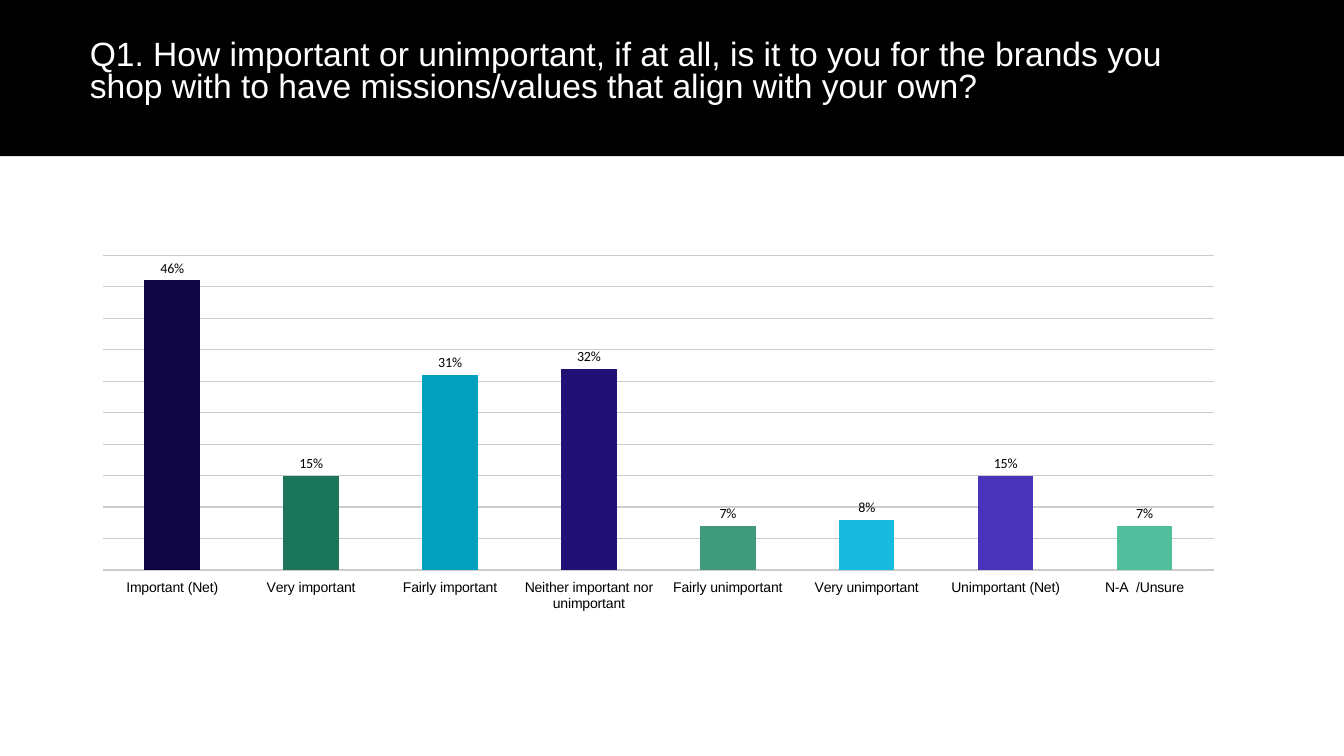
from lxml import etree
from pptx import Presentation
from pptx import util as u
from pptx.chart.data import CategoryChartData
from pptx.dml.color import RGBColor
from pptx.enum import chart as charts, shapes, text
from pptx.oxml.ns import qn

COLOURS = {"band": "000000", "title": "FFFFFF", "text": "000000", "grid": "CCCCCC"}
QUESTION = (
    "Q1. How important or unimportant, if at all, is it to you for the brands you "
    "shop with to have missions/values that align with your own?"
)
ANSWERS = [
    ("Important (Net)", 0.46, "0F0542"),
    ("Very important", 0.15, "1B755A"),
    ("Fairly important", 0.31, "00A0BE"),
    ("Neither important nor unimportant", 0.32, "211176"),
    ("Fairly unimportant", 0.07, "409A7C"),
    ("Very unimportant", 0.08, "18BBDD"),
    ("Unimportant (Net)", 0.15, "4933B9"),
    ("N-A  /Unsure", 0.07, "51BE9C"),
]
LEFT, WIDTH = u.Inches(0.79), u.Inches(11.48)


def set_font(font, name, size, colour):
    font.name = name
    font.size = u.Pt(size)
    font.bold = False
    font.color.rgb = RGBColor.from_string(colour)


def add_band(slide, height):
    band = slide.shapes.add_shape(
        shapes.MSO_SHAPE.RECTANGLE, 0, 0, u.Inches(13.33), height
    )
    band.shadow.inherit = False
    band.fill.solid()
    band.fill.fore_color.rgb = RGBColor.from_string(COLOURS["band"])
    band.line.fill.background()
    slide.shapes.title.element.addprevious(band.element)


def fill_title(title):
    title.left, title.top = LEFT, u.Inches(0.35)
    title.width, title.height = WIDTH, u.Inches(0.8)
    frame = title.text_frame
    frame.word_wrap = True
    frame.auto_size = text.MSO_AUTO_SIZE.NONE
    frame.vertical_anchor = text.MSO_ANCHOR.TOP
    paragraph = frame.paragraphs[0]
    paragraph.alignment = text.PP_ALIGN.LEFT
    paragraph.line_spacing = 0.8
    paragraph.space_before = u.Pt(0)
    run = paragraph.add_run()
    run.text = QUESTION
    set_font(run.font, "Arial", 24, COLOURS["title"])


def format_axes(chart):
    category_axis = chart.category_axis
    category_axis.major_tick_mark = charts.XL_TICK_MARK.NONE
    category_axis.tick_label_position = charts.XL_TICK_LABEL_POSITION.LOW
    category_axis.format.line.fill.background()
    set_font(category_axis.tick_labels.font, "Arial", 10, COLOURS["text"])

    value_axis = chart.value_axis
    value_axis.minimum_scale, value_axis.maximum_scale = 0, 0.5
    value_axis.major_unit = 0.05
    value_axis.has_major_gridlines = True
    grid_line = value_axis.major_gridlines.format.line
    grid_line.color.rgb = RGBColor.from_string(COLOURS["grid"])
    grid_line.width = u.Pt(0.75)
    value_axis.visible = False


def add_answer_chart(slide):
    data = CategoryChartData(number_format="0%")
    data.categories = [answer for answer, share, colour in ANSWERS]
    data.add_series("Series 1", [share for answer, share, colour in ANSWERS])
    chart = slide.shapes.add_chart(
        charts.XL_CHART_TYPE.COLUMN_CLUSTERED,
        LEFT, u.Inches(2.46), WIDTH, u.Inches(3.68), data,
    ).chart
    chart.has_title = False
    chart.has_legend = False
    set_font(chart.font, "Calibri", 12, COLOURS["text"])
    format_axes(chart)

    plot = chart.plots[0]
    plot.gap_width = 150
    plot.vary_by_categories = False
    plot.has_data_labels = True
    labels = plot.data_labels
    labels.show_value = True
    labels.number_format = "0%"
    labels.number_format_is_linked = False
    labels.position = charts.XL_LABEL_POSITION.OUTSIDE_END
    set_font(labels.font, "Calibri", 10, COLOURS["text"])
    for index, (answer, share, colour) in enumerate(ANSWERS):
        fill = plot.series[0].points[index].format.fill
        fill.solid()
        fill.fore_color.rgb = RGBColor.from_string(colour)


def main():
    presentation = Presentation()
    presentation.slide_width = u.Inches(13.33)
    presentation.slide_height = u.Inches(7.5)
    slide = presentation.slides.add_slide(presentation.slide_layouts[5])
    add_band(slide, u.Inches(1.55))
    fill_title(slide.shapes.title)
    add_answer_chart(slide)
    presentation.save("out.pptx")


if __name__ == "__main__":
    main()
